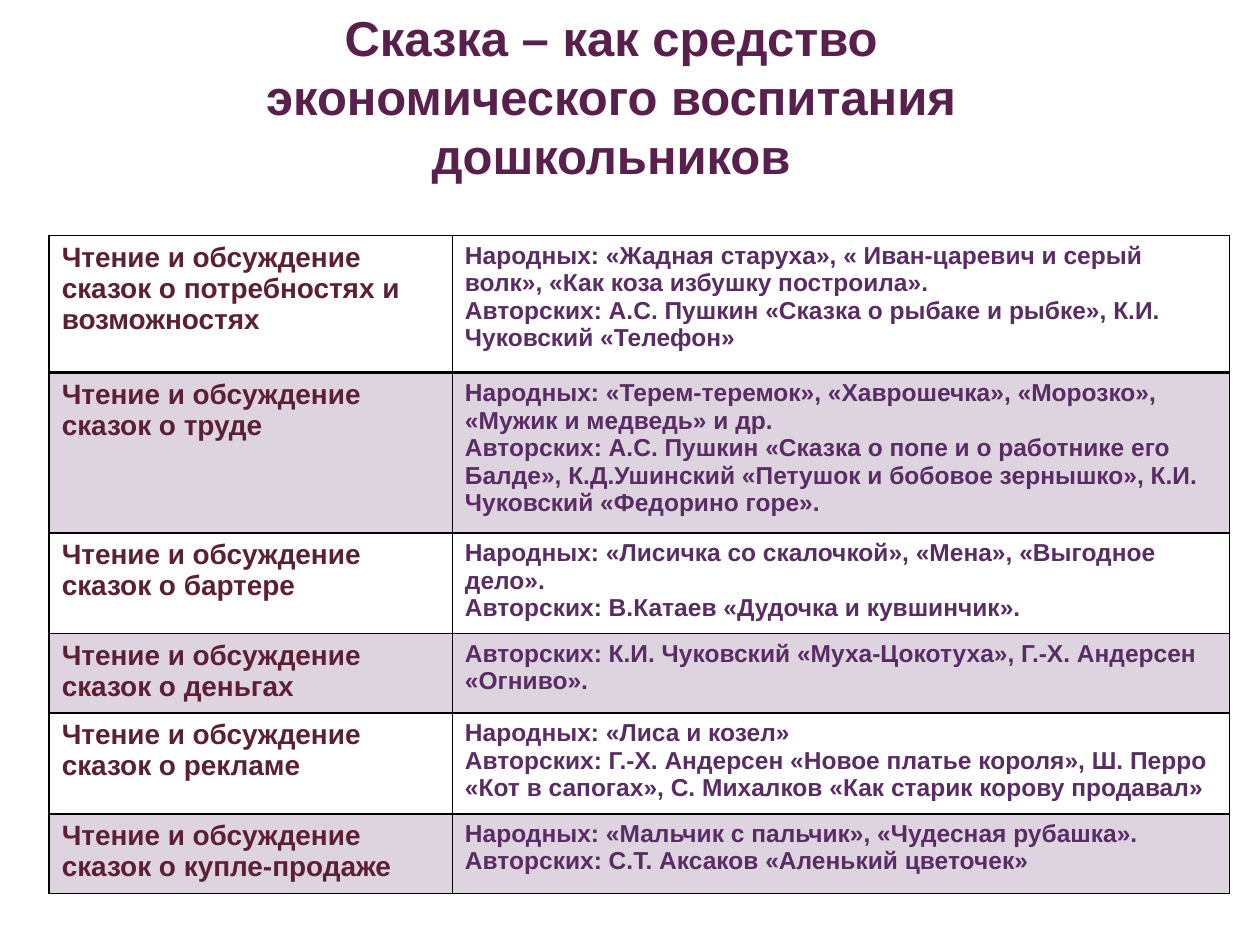
from dataclasses import dataclass

from lxml.etree import SubElement
from pptx import Presentation
from pptx.dml.color import RGBColor
from pptx.enum.text import MSO_ANCHOR, MSO_AUTO_SIZE, PP_ALIGN
from pptx.oxml.ns import qn
from pptx.util import Inches, Pt

TITLE = "Сказка – как средство экономического воспитания дошкольников"
TOPIC_LEAD = "Чтение и обсуждение сказок о "

# topic, reading list, row height in inches
TALES = [
    ("потребностях и возможностях",
     ["Народных: «Жадная старуха», « Иван-царевич и серый волк», «Как коза избушку построила».",
      "Авторских: А.С. Пушкин «Сказка о рыбаке и рыбке», К.И. Чуковский «Телефон»"], 1.09),
    ("труде",
     ["Народных: «Терем-теремок», «Хаврошечка», «Морозко», «Мужик и медведь» и др.",
      "Авторских: А.С. Пушкин «Сказка о попе и о работнике его Балде», К.Д.Ушинский "
      "«Петушок и бобовое зернышко», К.И. Чуковский «Федорино горе»."], 1.27),
    ("бартере",
     ["Народных: «Лисичка со скалочкой», «Мена», «Выгодное дело».",
      "Авторских: В.Катаев «Дудочка и кувшинчик»."], 0.8),
    ("деньгах",
     ["Авторских: К.И. Чуковский «Муха-Цокотуха», Г.-Х. Андерсен «Огниво»."], 0.63),
    ("рекламе",
     ["Народных: «Лиса и козел»",
      "Авторских: Г.-Х. Андерсен «Новое платье короля», Ш. Перро «Кот в сапогах», "
      "С. Михалков «Как старик корову продавал»"], 0.8),
    ("купле-продаже",
     ["Народных: «Мальчик с пальчик», «Чудесная рубашка».",
      "Авторских: С.Т. Аксаков «Аленький цветочек»"], 0.63),
]
COLUMN_WIDTHS = (3.2, 6.17)


@dataclass(frozen=True)
class Theme:
    font: str = "Arial"
    title_color: str = "591F4D"
    topic_color: str = "5C1F34"
    tale_color: str = "5A2C64"
    band_color: str = "5A2C64"
    band_opacity: int = 20
    border_color: str = "000000"
    title_size: int = 28
    topic_size: int = 16
    tale_size: int = 14


THEME = Theme()


def write(frame, paragraphs, *, size, color, align=PP_ALIGN.LEFT, spacing=1.0):
    frame.text = "\n".join(paragraphs)
    for paragraph in frame.paragraphs:
        paragraph.alignment = align
        paragraph.line_spacing = spacing
        for run in paragraph.runs:
            run.font.name = THEME.font
            run.font.size = Pt(size)
            run.font.bold = True
            run.font.color.rgb = RGBColor.from_string(color)


def draw_borders(cell, bottom):
    properties = cell._tc.get_or_add_tcPr()
    for position, (side, points) in enumerate(
            [("lnL", 1), ("lnR", 1), ("lnT", 1), ("lnB", bottom)]):
        line = SubElement(properties, qn(f"a:{side}"), w=str(Pt(points)))
        fill = SubElement(line, qn("a:solidFill"))
        SubElement(fill, qn("a:srgbClr"), val=THEME.border_color)
        properties.insert(position, line)


def fill_cell(cell, banded):
    if not banded:
        cell.fill.background()
        return
    cell.fill.solid()
    cell.fill.fore_color.rgb = RGBColor.from_string(THEME.band_color)
    tint = cell._tc.tcPr.find(f".//{qn('a:solidFill')}/{qn('a:srgbClr')}")
    SubElement(tint, qn("a:alpha"), val=str(THEME.band_opacity * 1000))


def add_title(slide):
    title = slide.shapes.title
    title.left, title.top, title.width, title.height = map(Inches, (1.06, 0.01, 7.58, 1.51))
    frame = title.text_frame
    frame.word_wrap = True
    frame.auto_size = MSO_AUTO_SIZE.NONE
    frame.vertical_anchor = MSO_ANCHOR.TOP
    write(frame, [TITLE], size=THEME.title_size, color=THEME.title_color,
          align=PP_ALIGN.CENTER)


def add_tales(slide):
    heights = [height for _, _, height in TALES]
    table = slide.shapes.add_table(
        len(TALES), len(COLUMN_WIDTHS), Inches(0.39), Inches(1.87),
        Inches(sum(COLUMN_WIDTHS)), Inches(sum(heights))).table
    table.first_row = table.horz_banding = False
    for column, width in zip(table.columns, COLUMN_WIDTHS):
        column.width = Inches(width)
    for index, (topic, tales, height) in enumerate(TALES):
        row = table.rows[index]
        row.height = Inches(height)
        topic_cell, tales_cell = row.cells
        write(topic_cell.text_frame, [TOPIC_LEAD + topic],
              size=THEME.topic_size, color=THEME.topic_color)
        write(tales_cell.text_frame, tales, size=THEME.tale_size, color=THEME.tale_color)
        for cell in row.cells:
            fill_cell(cell, banded=index % 2 == 1)
            draw_borders(cell, bottom=2 if index == 0 else 1)


def main():
    deck = Presentation()
    deck.slide_width, deck.slide_height = Inches(10), Inches(7.5)
    slide = deck.slides.add_slide(deck.slide_layouts[5])
    add_title(slide)
    add_tales(slide)
    deck.save("out.pptx")


if __name__ == "__main__":
    main()
